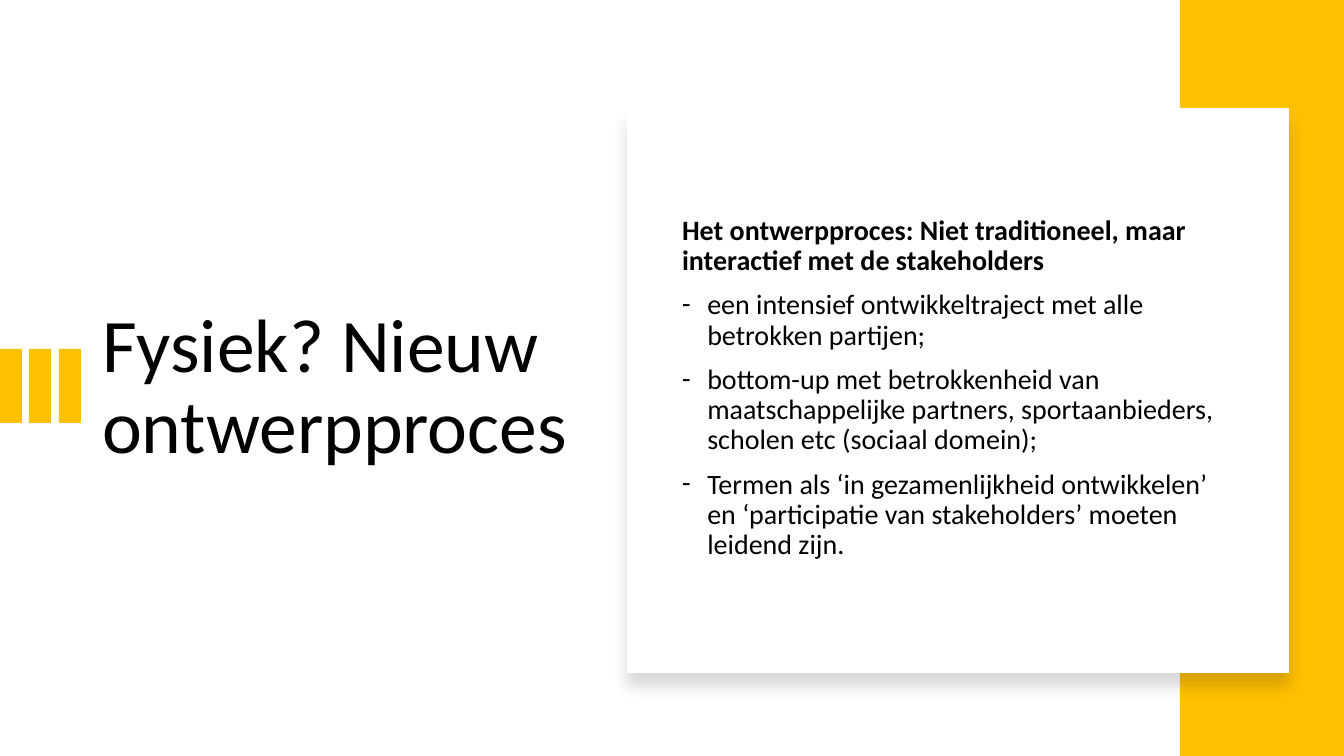
"""Build the slide on the new design process."""
from lxml import etree
from pptx import Presentation
from pptx.dml.color import RGBColor
from pptx.enum.shapes import MSO_SHAPE
from pptx.enum.text import MSO_ANCHOR, MSO_AUTO_SIZE, PP_ALIGN
from pptx.oxml.ns import qn
from pptx.util import Pt

RECT = MSO_SHAPE.RECTANGLE
MIDDLE = MSO_ANCHOR.MIDDLE
FIXED = MSO_AUTO_SIZE.NONE
LEFT = PP_ALIGN.LEFT
PX = 12192000 / 1344
FONT = "Calibri"
COLORS = {"gold": "FFC000", "white": "FFFFFF", "black": "000000"}
LINES = [
    "Het ontwerpproces: Niet traditioneel, maar interactief met de stakeholders",
    "een intensief ontwikkeltraject met alle betrokken partijen;",
    "bottom-up met betrokkenheid van maatschappelijke partners, "
    "sportaanbieders, scholen etc (sociaal domein);",
    "Termen als ‘in gezamenlijkheid ontwikkelen’ en "
    "‘participatie van stakeholders’ moeten leidend zijn.",
]


def add_rect(x, y, w, h, color):
    rect = slide.shapes.add_shape(RECT, *(round(n * PX) for n in (x, y, w, h)))
    rect.shadow.inherit = False
    rect.fill.solid()
    rect.fill.fore_color.rgb = RGBColor.from_string(COLORS[color])
    rect.line.fill.background()
    return rect


def set_text(holder, box, lines, size):
    holder.left, holder.top, holder.width, holder.height = (round(n * PX) for n in box)
    frame = holder.text_frame
    frame.text = "\n".join(lines)
    frame.word_wrap = True
    frame.auto_size = FIXED
    frame.vertical_anchor = MIDDLE
    for para in frame.paragraphs:
        para.alignment = LEFT
        para.line_spacing = 0.9
        para.space_before = Pt(0)
        for run in para.runs:
            run.font.name = FONT
            run.font.size = Pt(size)
            run.font.color.rgb = RGBColor.from_string(COLORS["black"])
    return frame.paragraphs


prs = Presentation()
prs.slide_width, prs.slide_height = round(1344 * PX), round(756 * PX)
slide = prs.slides.add_slide(prs.slide_layouts[1])
title, body = slide.placeholders

set_text(title, (92, 147, 534, 483), ["Fysiek? Nieuw ontwerpproces"], 54)

for i in range(3):
    add_rect(i * 59 // 2, 349, 22, 74, "gold")
add_rect(1180, 0, 164, 756, "gold")

card = add_rect(627, 108, 662, 565, "white")
effects = card._element.spPr.find(qn("a:effectLst"))
shadow = etree.SubElement(effects, qn("a:outerShdw"), blurRad=str(Pt(11)),
                          dist=str(Pt(10)), dir="5400000", algn="t", rotWithShape="0")
tint = etree.SubElement(shadow, qn("a:srgbClr"), val=COLORS["black"])
etree.SubElement(tint, qn("a:alpha"), val="15000")

slide.shapes._spTree.append(body._element)
head, *points = set_text(body, (672, 147, 580, 483), LINES, 20)
props = head._p.get_or_add_pPr()
props.set("marL", "0")
props.set("indent", "0")
etree.SubElement(props, qn("a:buNone"))
head.runs[0].font.bold = True
for point in points:
    props = point._p.get_or_add_pPr()
    props.set("marL", "228600")
    props.set("indent", "-228600")
    etree.SubElement(props, qn("a:buFont"), typeface=FONT)
    etree.SubElement(props, qn("a:buChar"), char="-")
    point.space_before = Pt(10)

prs.save("out.pptx")
